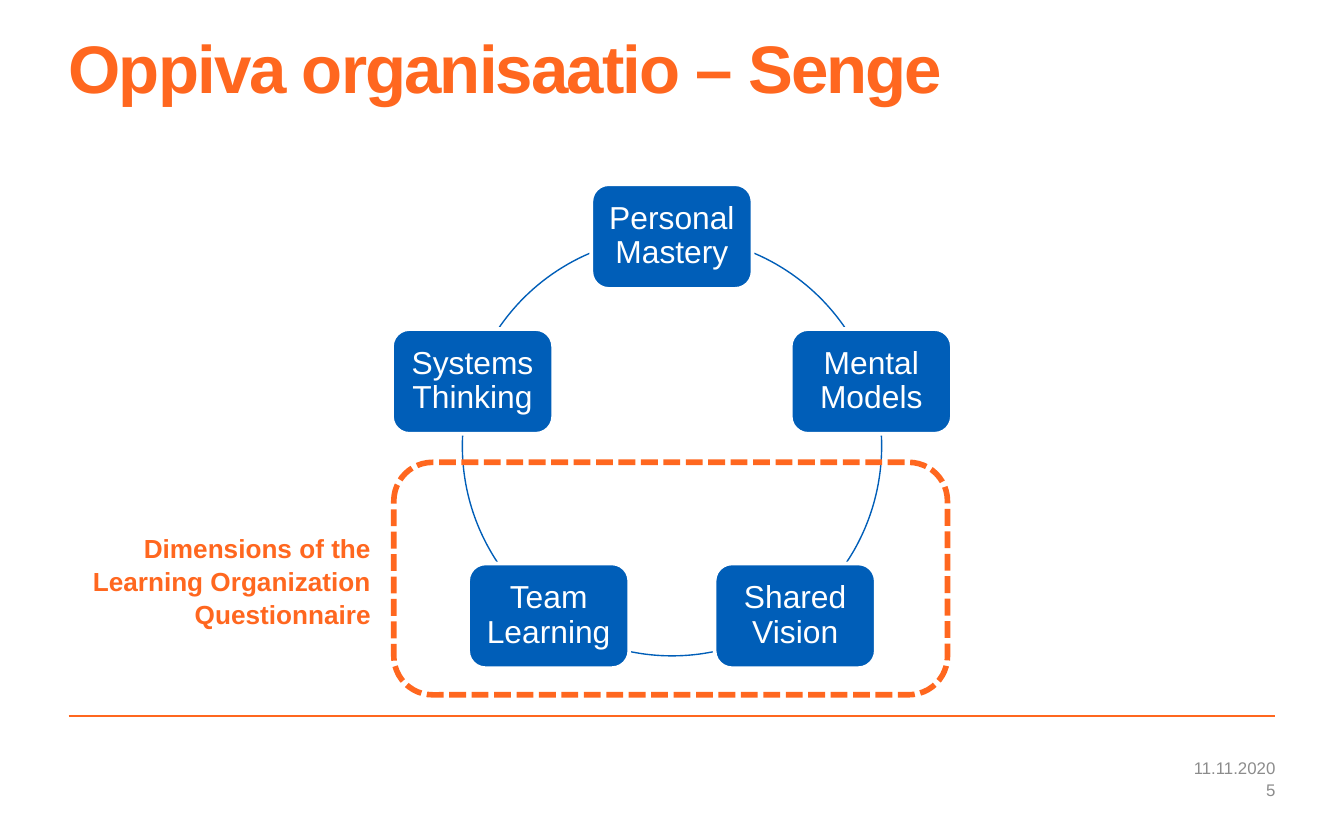
import math
from dataclasses import dataclass

from pptx import Presentation
from pptx import util as u
from pptx.dml.color import RGBColor
from pptx.enum import dml, shapes, text
from pptx.oxml.ns import qn
from lxml import etree


@dataclass(frozen=True)
class Theme:
    font: str = "Arial"
    orange: str = "FF671F"
    blue: str = "005EB8"
    white: str = "FFFFFF"
    grey: str = "8C8C8C"
    title_size: int = 36
    node_size: int = 17
    note_size: int = 14
    footer_size: int = 9


THEME = Theme()
PX = u.Inches(0.01)

TITLE = "Oppiva organisaatio –\u00a0Senge"
DISCIPLINES = ["Personal Mastery", "Mental Models", "Shared Vision", "Team Learning", "Systems Thinking"]
ARCS = [(293, 326), (357, 33.6), (78.5, 101.5), (146.4, 183), (214, 247)]
QUESTIONNAIRE = "Dimensions of the\vLearning Organization\vQuestionnaire"
FOOTERS = [("11.11.2020", 563, 17), ("5", 580, 15)]

CENTER_X, CENTER_Y, RADIUS = 500, 332, 156
NODE_W, NODE_H = 120, 78
MARGIN, RIGHT = 51, 949


def px(*lengths):
    return [round(length * PX) for length in lengths]


def write(target, words, size, color, bold=False, align=text.PP_ALIGN.LEFT,
          anchor=text.MSO_ANCHOR.TOP, leading=1.0, inset=0, wrap=True, tracking=None):
    frame = target.text_frame
    frame.auto_size = text.MSO_AUTO_SIZE.NONE
    frame.word_wrap = wrap
    frame.vertical_anchor = anchor
    frame.margin_left = frame.margin_right = frame.margin_top = frame.margin_bottom = px(inset)[0]
    paragraph = frame.paragraphs[0]
    paragraph.text = words
    paragraph.alignment = align
    paragraph.line_spacing = leading
    for run in paragraph.runs:
        run.font.name = THEME.font
        run.font.size = u.Pt(size)
        run.font.bold = bold
        run.font.color.rgb = RGBColor.from_string(color)
        if tracking is not None:
            run.font._element.set("spc", str(tracking * 100))


def outline(part, color, width):
    part.line.color.rgb = RGBColor.from_string(color)
    part.line.width = u.Pt(width)


def draw(slide, preset, box, line, width, fill=None):
    part = slide.shapes.add_shape(preset, *px(*box))
    part.shadow.inherit = False
    if fill:
        part.fill.solid()
        part.fill.fore_color.rgb = RGBColor.from_string(fill)
    else:
        part.fill.background()
    outline(part, line, width)
    return part


def add_rule(slide):
    rule = slide.shapes.add_connector(shapes.MSO_CONNECTOR.STRAIGHT, *px(MARGIN, 533, RIGHT, 533))
    outline(rule, THEME.orange, 1)
    etree.SubElement(rule._element.spPr, qn("a:effectLst"))


def add_cycle(slide):
    ring = (CENTER_X - RADIUS, CENTER_Y - RADIUS, 2 * RADIUS, 2 * RADIUS)
    for start, end in ARCS:
        arc = draw(slide, shapes.MSO_SHAPE.ARC, ring, THEME.blue, 0.75)
        arc.adjustments[0] = start * 0.6
        arc.adjustments[1] = end * 0.6
    for index, discipline in enumerate(DISCIPLINES):
        angle = math.tau * index / len(DISCIPLINES) - math.pi / 2
        left = CENTER_X + RADIUS * math.cos(angle) - NODE_W / 2
        top = CENTER_Y + RADIUS * math.sin(angle) - NODE_H / 2
        node = draw(slide, shapes.MSO_SHAPE.ROUNDED_RECTANGLE, (left, top, NODE_W, NODE_H),
                    THEME.white, 2, THEME.blue)
        write(node, discipline, THEME.node_size, THEME.white, align=text.PP_ALIGN.CENTER,
              anchor=text.MSO_ANCHOR.MIDDLE, leading=0.9, inset=7)


def main():
    deck = Presentation()
    deck.slide_width, deck.slide_height = px(1000, 625)
    slide = deck.slides.add_slide(deck.slide_layouts[5])

    title = slide.shapes.title
    title.left, title.top, title.width, title.height = px(MARGIN, 29, RIGHT - MARGIN, 109)
    write(title, TITLE, THEME.title_size, THEME.orange, bold=True, leading=0.85, tracking=-1)

    add_rule(slide)
    add_cycle(slide)

    for words, top, height in FOOTERS:
        footer = slide.shapes.add_textbox(*px(553, top, RIGHT - 553, height))
        write(footer, words, THEME.footer_size, THEME.grey, align=text.PP_ALIGN.RIGHT,
              anchor=text.MSO_ANCHOR.MIDDLE)

    scope = draw(slide, shapes.MSO_SHAPE.ROUNDED_RECTANGLE, (293, 344, 412, 173), THEME.orange, 3)
    scope.line.dash_style = dml.MSO_LINE.SQUARE_DOT
    scope_label = slide.shapes.add_textbox(*px(68, 395, 208, 71))
    write(scope_label, QUESTIONNAIRE, THEME.note_size, THEME.orange, bold=True,
          align=text.PP_ALIGN.RIGHT, leading=1.05, wrap=False)

    deck.save("out.pptx")


if __name__ == "__main__":
    main()
